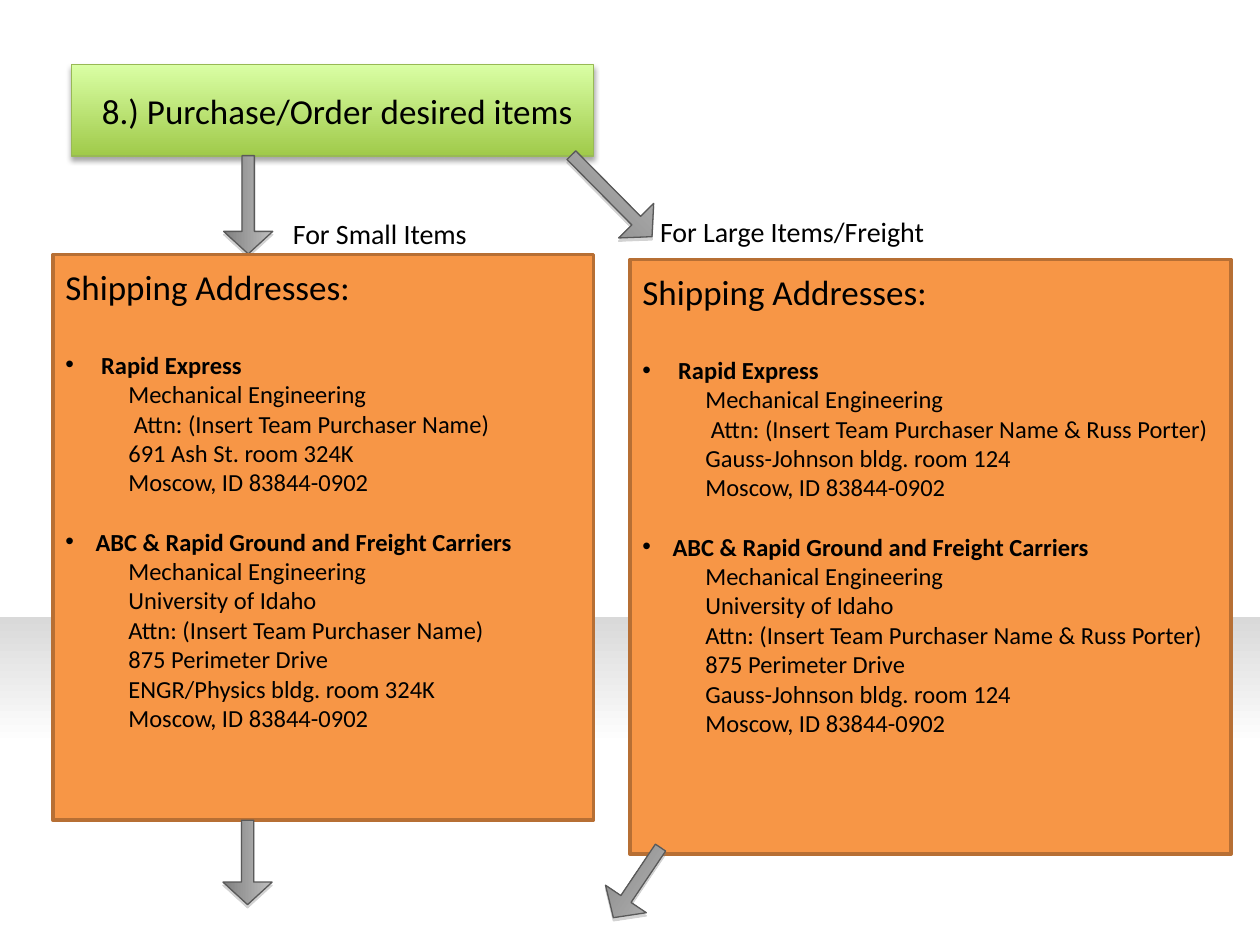
from dataclasses import dataclass

from lxml import etree
from pptx import Presentation
from pptx.dml.color import RGBColor
from pptx.enum.shapes import MSO_SHAPE
from pptx.enum.text import PP_ALIGN
from pptx.oxml.ns import qn
from pptx.util import Inches, Pt

RECT = MSO_SHAPE.RECTANGLE
ARROW = MSO_SHAPE.RIGHT_ARROW
LEFT, CENTER = PP_ALIGN.LEFT, PP_ALIGN.CENTER


@dataclass(frozen=True)
class Theme:
    font: str = "Calibri"
    text: str = "000000"
    panel: str = "F79646"
    panel_line: str = "B76F34"
    band: tuple = ((0.61, "FFFFFF"), (1, "D9D9D9"))
    title: tuple = ((0, "A0CA4A"), (1, "DAFFA5"))
    title_line: str = "98B955"
    title_shadow: str = "000000"
    arrow: tuple = ((0, "BFBFBF"), (1, "7F7F7F"))
    arrow_line: str = "595959"
    arrow_shadow: str = "808080"
    heading_size: int = 20
    label_size: int = 16
    body_size: int = 14


THEME = Theme()


def add_box(s, box, fill, kind=RECT, line=None, width=0.75, angle=90):
    sp = s.shapes.add_shape(kind, *map(Inches, box))
    sp.shadow.inherit = False
    if isinstance(fill, str):
        sp.fill.solid()
        sp.fill.fore_color.rgb = RGBColor.from_string(fill)
    else:
        sp.fill.gradient()
        sp.fill.gradient_angle = angle
        for stop, (position, color) in zip(sp.fill.gradient_stops, fill):
            stop.position = position
            stop.color.rgb = RGBColor.from_string(color)
    if line:
        sp.line.color.rgb = RGBColor.from_string(line)
        sp.line.width = Pt(width)
    else:
        sp.line.fill.background()
    return sp


def add_shadow(sp, color, blur=0):
    effects = sp._element.spPr.find(qn("a:effectLst"))
    shadow = etree.SubElement(
        effects, qn("a:outerShdw"), blurRad=str(Pt(blur)), dist=str(Pt(1.8)),
        dir="5400000", rotWithShape="0")
    rgb = etree.SubElement(shadow, qn("a:srgbClr"), val=color)
    etree.SubElement(rgb, qn("a:alpha"), val="35000")


def add_text_frame(s, box):
    tf = s.shapes.add_textbox(*map(Inches, box)).text_frame
    tf.word_wrap = True
    return tf


def write(p, text, size=THEME.body_size, bold=False, align=LEFT,
          indent=0, bullet=False, after=0):
    r = p.add_run()
    r.text = text
    r.font.name = THEME.font
    r.font.size = Pt(size)
    r.font.bold = bold
    r.font.color.rgb = RGBColor.from_string(THEME.text)
    p.alignment = align
    p.space_after = Pt(after)
    pPr = p._p.get_or_add_pPr()
    pPr.set("marL", str(Inches(indent)))
    pPr.set("indent", str(Inches(-indent if bullet else 0)))
    if bullet:
        etree.SubElement(pPr, qn("a:buFont"), typeface="Arial")
        etree.SubElement(pPr, qn("a:buChar"), char="•")


def add_label(s, box, text, **fmt):
    write(add_text_frame(s, box).paragraphs[0], text, **fmt)


def add_title(s, box):
    x, y, w, h = box
    sp = add_box(s, box, THEME.title, line=THEME.title_line)
    add_shadow(sp, THEME.title_shadow, blur=3.1)
    add_label(s, (x + 0.14, y + 0.15, w + 0.5, 0.44),
              "8.) Purchase/Order desired items", size=THEME.heading_size)


def add_arrow(s, box, rotation):
    sp = add_box(s, box, THEME.arrow, ARROW, THEME.arrow_line, angle=270)
    sp.adjustments[0], sp.adjustments[1] = 0.25, 0.458
    sp.rotation = rotation
    add_shadow(sp, THEME.arrow_shadow)


def add_address_panel(s, box, buyer, express_room, ground_room):
    x, y, w, h = box
    add_box(s, box, THEME.panel, line=THEME.panel_line, width=2)
    tf = add_text_frame(s, (x, y + 0.04, w, 3.84))
    write(tf.paragraphs[0], "Shipping Addresses:",
          size=THEME.heading_size, after=24)
    attn = f"Attn: (Insert Team {buyer})"
    city = "Moscow, ID 83844-0902"
    carriers = {
        " Rapid Express": ["Mechanical Engineering", " " + attn,
                           express_room, city],
        "ABC & Rapid Ground and Freight Carriers": [
            "Mechanical Engineering", "University of Idaho", attn,
            "875 Perimeter Drive", ground_room, city],
    }
    for carrier, lines in carriers.items():
        write(tf.add_paragraph(), carrier, bold=True, indent=0.24, bullet=True)
        for text in lines:
            write(tf.add_paragraph(), text, indent=0.5,
                  after=17 if text == city else 0)


def main():
    prs = Presentation()
    prs.slide_width, prs.slide_height = Inches(10), Inches(7.5)
    s = prs.slides.add_slide(prs.slide_layouts[6])
    add_box(s, (0, 4.9, 10, 2.6), THEME.band)
    add_title(s, (0.57, 0.51, 4.14, 0.73))
    add_arrow(s, (4.4, 1.36, 0.91, 0.39), 45.3)
    add_arrow(s, (1.58, 1.43, 0.78, 0.39), 90)
    add_label(s, (2.16, 1.67, 1.71, 0.37), "For Small Items",
              size=THEME.label_size, align=CENTER)
    add_label(s, (5.14, 1.65, 3.8, 0.37), "For Large Items/Freight",
              size=THEME.label_size)
    add_address_panel(s, (0.42, 2.02, 4.29, 4.49), "Purchaser Name",
                      "691 Ash St. room 324K", "ENGR/Physics bldg. room 324K")
    large_room = "Gauss-Johnson bldg. room 124"
    add_address_panel(s, (5, 2.06, 4.77, 4.72), "Purchaser Name & Russ Porter",
                      large_room, large_room)
    add_arrow(s, (1.63, 6.65, 0.67, 0.39), 90)
    add_arrow(s, (4.72, 6.81, 0.67, 0.39), 123.9)
    prs.save("out.pptx")


if __name__ == "__main__":
    main()
